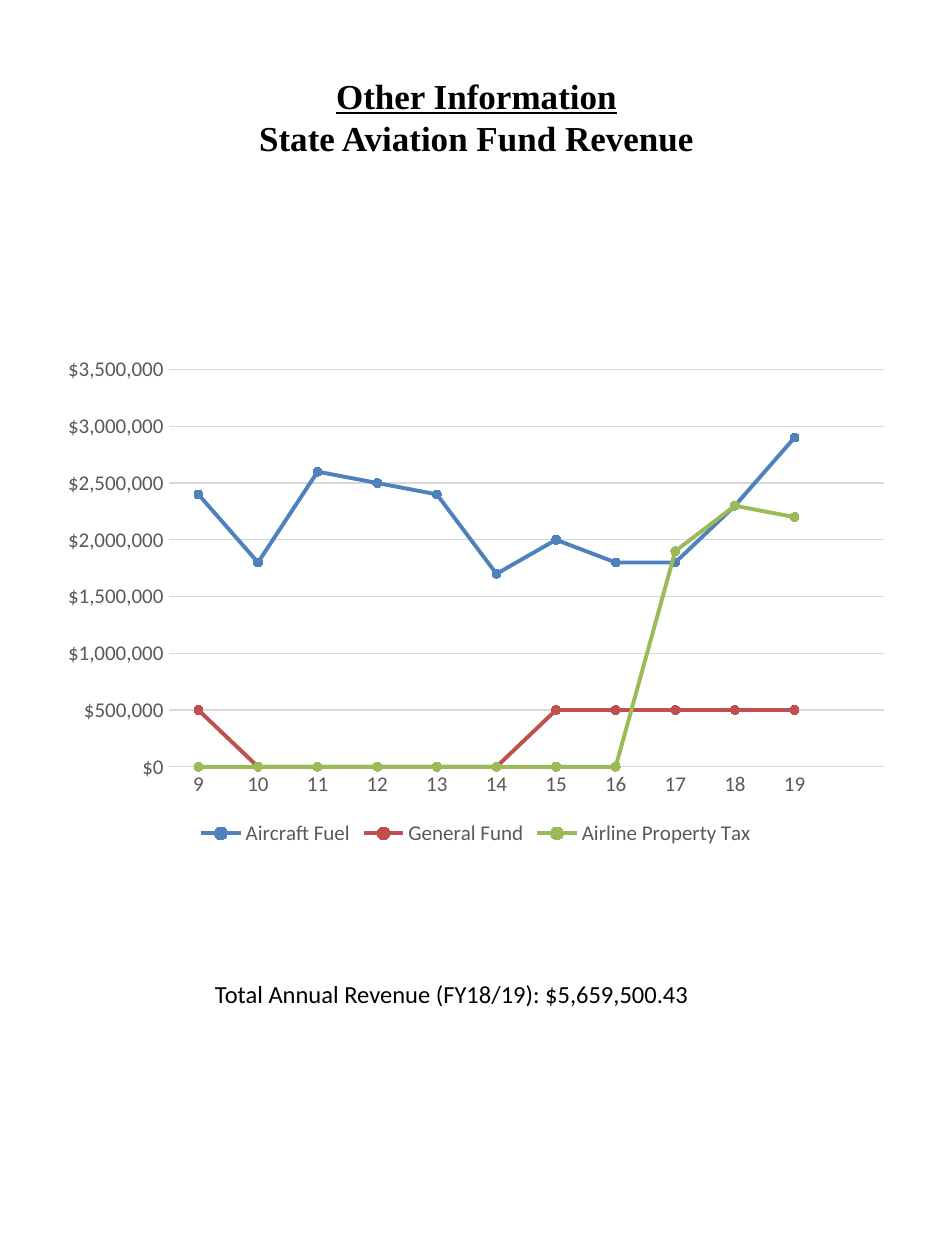
import pptx
import pptx.chart.data
import pptx.dml.color
import pptx.enum.chart
import pptx.enum.text
import pptx.util

PX = 914400 // 126
BLACK, GREY, RULE = "000000", "595959", "D9D9D9"
YEARS = [str(year) for year in range(9, 20)] + [""]
REVENUE = [
    ("Aircraft Fuel", "4F81BD",
     [2400000, 1800000, 2600000, 2500000, 2400000, 1700000,
      2000000, 1800000, 1800000, 2300000, 2900000, None]),
    ("General Fund", "C0504D", [500000] + [0] * 5 + [500000] * 5 + [None]),
    ("Airline Property Tax", "9BBB59",
     [0] * 8 + [1900000, 2300000, 2200000, None]),
]


def px(n):
    return pptx.util.Emu(n * PX)


def rgb(color):
    return pptx.dml.color.RGBColor.from_string(color)


class Page:
    """Holds the style and the current slide, and adds elements to it."""

    def __init__(self, prs, font="Calibri"):
        self.s = prs.slides.add_slide(prs.slide_layouts[6])
        self.font = font

    def style(self, font, size, color=BLACK, name=None):
        font.name = name or self.font
        font.size = pptx.util.Pt(size)
        font.color.rgb = rgb(color)

    def line(self, line, color, width):
        line.color.rgb = rgb(color)
        line.width = pptx.util.Pt(width)

    def text(self, box, text, size, name=None, bold=False, bottom=6):
        sp = self.s.shapes.add_textbox(*map(px, box))
        tf = sp.text_frame
        tf.word_wrap = True
        tf.vertical_anchor = pptx.enum.text.MSO_ANCHOR.MIDDLE
        tf.margin_bottom = px(bottom)
        tf.text = text
        p = tf.paragraphs[0]
        p.alignment = pptx.enum.text.PP_ALIGN.CENTER
        for r in p.runs:
            self.style(r.font, size, name=name)
            r.font.bold = bold
        return p

    def axis(self, axis):
        axis.major_tick_mark = pptx.enum.chart.XL_TICK_MARK.NONE
        axis.minor_tick_mark = pptx.enum.chart.XL_TICK_MARK.NONE
        self.style(axis.tick_labels.font, 12, GREY)

    def line_chart(self, box, categories, rows, top, step):
        data = pptx.chart.data.CategoryChartData()
        data.categories = categories
        for name, _, values in rows:
            data.add_series(name, values)
        kind = pptx.enum.chart.XL_CHART_TYPE.LINE_MARKERS
        chart = self.s.shapes.add_chart(kind, *map(px, box), data).chart
        self.style(chart.font, 10)
        chart.has_title = False
        chart.has_legend = True
        chart.legend.position = pptx.enum.chart.XL_LEGEND_POSITION.BOTTOM
        chart.legend.include_in_layout = False
        self.style(chart.legend.font, 12, GREY)

        self.axis(chart.category_axis)
        self.line(chart.category_axis.format.line, RULE, 0.75)
        values = chart.value_axis
        self.axis(values)
        values.minimum_scale, values.maximum_scale = 0, top
        values.major_unit = step
        values.format.line.fill.background()
        self.line(values.major_gridlines.format.line, RULE, 0.75)
        values.tick_labels.number_format = '"$"#,##0'
        values.tick_labels.number_format_is_linked = False

        plot = chart.plots[0]
        plot.vary_by_categories = False
        for series, (_, color, _) in zip(plot.series, rows):
            series.smooth = False
            self.line(series.format.line, color, 2.25)
            marker = series.marker
            marker.style = pptx.enum.chart.XL_MARKER_STYLE.CIRCLE
            marker.size = 5
            marker.format.fill.solid()
            marker.format.fill.fore_color.rgb = rgb(color)
            self.line(marker.format.line, color, 0.75)


def main():
    prs = pptx.Presentation()
    prs.slide_width, prs.slide_height = px(945), px(1260)
    page = Page(prs)
    title = page.text((51, 1, 851, 272),
                      "Other Information\vState Aviation Fund Revenue",
                      20, "Times New Roman", bold=True, bottom=48)
    title.runs[0].font.underline = True
    page.text((179, 972, 546, 43),
              "Total Annual Revenue (FY18/19): $5,659,500.43", 14)
    page.line_chart((51, 347, 850, 504), YEARS, REVENUE, 3500000, 500000)
    prs.save("out.pptx")


if __name__ == "__main__":
    main()
